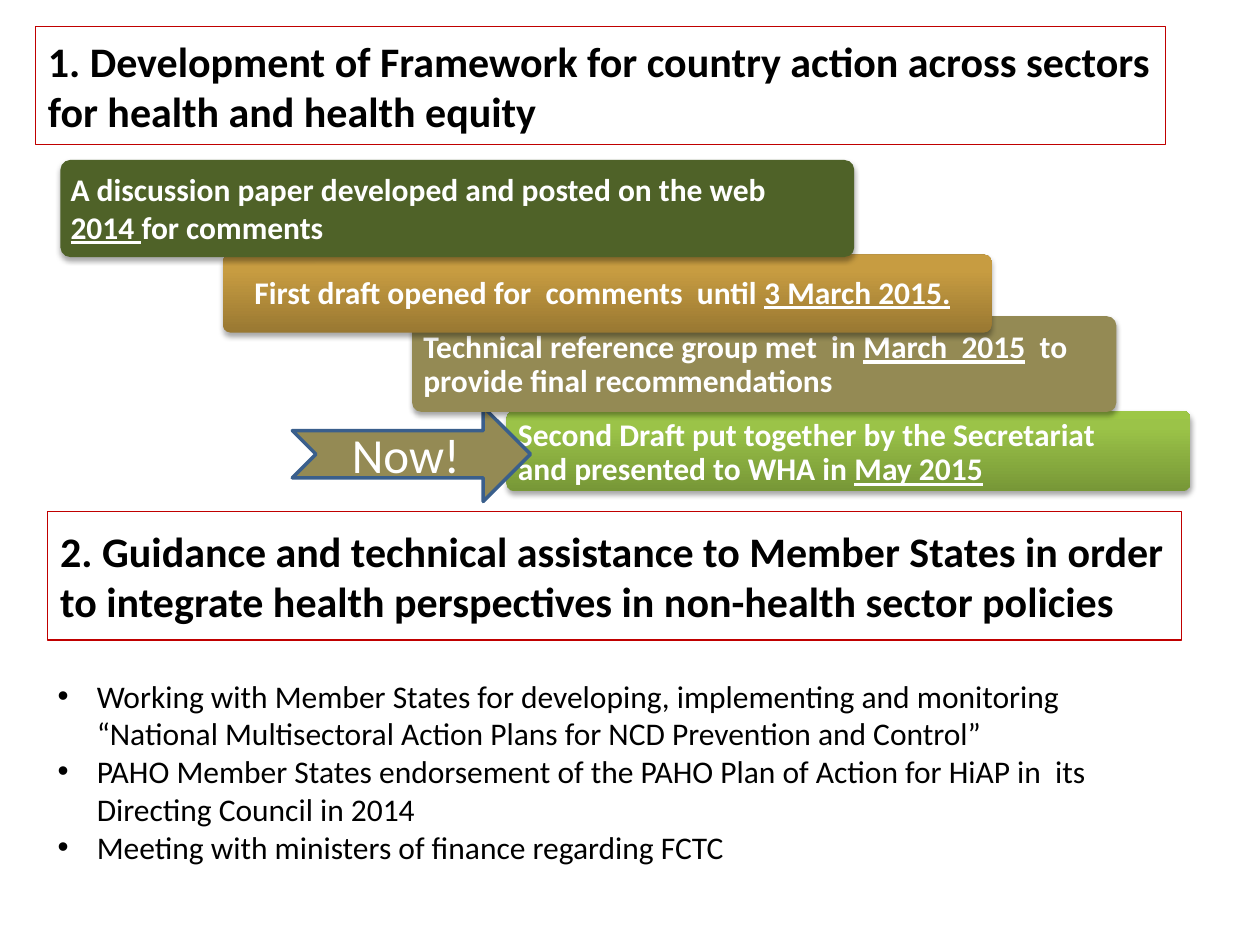
from dataclasses import dataclass
from typing import Optional

from lxml import etree
from pptx import Presentation
from pptx import util as u
from pptx.dml.color import RGBColor
from pptx.enum import shapes, text
from pptx.oxml import parse_xml
from pptx.oxml.ns import nsdecls, qn

FONT = "Calibri"
BLACK = RGBColor(0, 0, 0)
WHITE = RGBColor(255, 255, 255)
RED = RGBColor(0xC0, 0, 0)
BLUE = RGBColor(0x3A, 0x5F, 0x8C)
TAN = RGBColor(0x94, 0x8A, 0x54)
OLIVE = RGBColor(0x4F, 0x62, 0x28)
GOLDS = (RGBColor(0x99, 0x78, 0x32), RGBColor(0xC7, 0x9C, 0x41), RGBColor(0xCA, 0x9D, 0x3F))
GREENS = (RGBColor(0x77, 0x97, 0x37), RGBColor(0x9B, 0xC3, 0x48), RGBColor(0x9D, 0xC7, 0x46))
STOPS = (0, 80, 100)

prs = Presentation()
prs.slide_width, prs.slide_height = u.Inches(10), u.Inches(7.5)
COL, ROW = prs.slide_width / 100, prs.slide_height / 75


@dataclass(frozen=True)
class Box:
    col: float
    row: float
    cols: float
    rows: float

    def emu(self) -> tuple:
        return (round(self.col * COL), round(self.row * ROW),
                round(self.cols * COL), round(self.rows * ROW))


@dataclass(frozen=True)
class Step:
    box: Box
    label_box: Box
    label: str
    colors: tuple
    inset: float
    spacing: Optional[float] = None


def write(tf, content: str, *, size: int, color=BLACK, bold=False, align=None,
          anchor=text.MSO_ANCHOR.MIDDLE, inset=None, spacing=None, after=None,
          before=None, bullet=False) -> None:
    tf.word_wrap = True
    tf.auto_size = text.MSO_AUTO_SIZE.NONE
    tf.vertical_anchor = anchor
    if inset is not None:
        tf.margin_left = tf.margin_right = tf.margin_top = tf.margin_bottom = u.Inches(inset)
    for i, line in enumerate(content.split("\n")):
        p = tf.add_paragraph() if i else tf.paragraphs[0]
        p.alignment = align or text.PP_ALIGN.LEFT
        p.line_spacing, p.space_after, p.space_before = spacing, after, before
        if bullet:
            pPr = p._p.get_or_add_pPr()
            pPr.set("marL", str(u.Inches(0.31)))
            pPr.set("indent", str(-u.Inches(0.31)))
            etree.SubElement(pPr, qn("a:buFont")).set("typeface", "Arial")
            etree.SubElement(pPr, qn("a:buChar")).set("char", "•")
        for n, part in enumerate(line.split("_")):
            if part:
                r = p.add_run()
                r.text = part
                f = r.font
                f.name, f.size, f.bold, f.color.rgb = FONT, u.Pt(size), bold, color
                if n % 2:
                    f.underline = True


def outline(sp, color: RGBColor, width: float) -> None:
    sp.line.color.rgb = color
    sp.line.width = u.Pt(width)


def paint(sp, colors: tuple) -> None:
    if len(colors) == 1:
        sp.fill.solid()
        sp.fill.fore_color.rgb = colors[0]
        return
    stops = "".join(f'<a:gs pos="{pos * 1000}"><a:srgbClr val="{c}"/></a:gs>'
                    for pos, c in zip(STOPS, colors))
    sp._element.spPr.find(qn("a:prstGeom")).addnext(parse_xml(
        f'<a:gradFill {nsdecls("a")} rotWithShape="1"><a:gsLst>{stops}</a:gsLst>'
        '<a:lin ang="16200000" scaled="0"/></a:gradFill>'))


def cast_shadow(sp) -> None:
    sp.shadow.inherit = False
    sp._element.spPr.find(qn("a:effectLst")).append(parse_xml(
        f'<a:outerShdw {nsdecls("a")} blurRad="{u.Pt(3.1)}" dist="{u.Pt(1.8)}" '
        'dir="5400000" rotWithShape="0"><a:srgbClr val="000000">'
        '<a:alpha val="35000"/></a:srgbClr></a:outerShdw>'))


def draw_step(s, step: Step) -> None:
    group = s.shapes.add_group_shape()
    sp = group.shapes.add_shape(shapes.MSO_SHAPE.ROUNDED_RECTANGLE, *step.box.emu())
    sp.adjustments[0] = 0.1
    paint(sp, step.colors)
    sp.line.fill.background()
    cast_shadow(sp)
    label = group.shapes.add_textbox(*step.label_box.emu())
    write(label.text_frame, step.label, size=18, color=WHITE, bold=True, inset=step.inset,
          spacing=step.spacing, after=u.Pt(6.3) if step.spacing else None)


def draw_title(s) -> None:
    sp = s.shapes.title
    sp.left, sp.top, sp.width, sp.height = Box(2.8, 2.1, 89.7, 9.4).emu()
    outline(sp, RED, 0.75)
    write(sp.text_frame, "1. Development of Framework for country action across sectors "
          "for health and health equity", size=24, bold=True, before=u.Pt(4.8))


def draw_arrow(s) -> None:
    sp = s.shapes.add_shape(shapes.MSO_SHAPE.NOTCHED_RIGHT_ARROW, *Box(23.2, 32.3, 18.9, 7.5).emu())
    sp.shadow.inherit = False
    paint(sp, (TAN,))
    outline(sp, BLUE, 2)
    write(sp.text_frame, "Now! ", size=28, color=WHITE, align=text.PP_ALIGN.CENTER)


def draw_guidance(s) -> None:
    sp = s.shapes.add_shape(shapes.MSO_SHAPE.RECTANGLE, *Box(3.8, 40.6, 90, 10.2).emu())
    sp.shadow.inherit = False
    sp.fill.background()
    outline(sp, RED, 0.75)
    write(sp.text_frame, "2. Guidance and technical assistance to Member States in order "
          "to integrate health perspectives in non-health sector policies", size=24, bold=True)
    body = s.shapes.add_textbox(*Box(3.6, 53.2, 89.8, 16.2).emu())
    write(body.text_frame,
          "Working with Member States for developing, implementing and monitoring  "
          "“National Multisectoral Action Plans for NCD Prevention and Control”\n"
          "PAHO Member States endorsement of the PAHO Plan of Action for HiAP in  its "
          "Directing Council in 2014\n"
          "Meeting with ministers of finance regarding FCTC",
          size=18, anchor=text.MSO_ANCHOR.TOP, bullet=True)


LAST_STEP = Step(Box(40.2, 32.6, 54.3, 6.4), Box(40.4, 31.8, 50.1, 8.4),
                 "Second Draft put together by the Secretariat and presented to WHA in _May 2015_",
                 GREENS, 0.07, 0.9)
EARLIER_STEPS = (
    Step(Box(32.7, 25.1, 55.9, 7.6), Box(32.9, 25.4, 55.7, 7.2),
         "Technical reference group met  in _March  2015_  to provide final recommendations",
         (TAN,), 0.07, 0.9),
    Step(Box(17.7, 20.2, 61, 6.2), Box(19.4, 20.2, 59.3, 5.9),
         "First draft opened for  comments  until _3 March 2015._", GOLDS, 0.08),
    Step(Box(4.8, 12.7, 63, 7.7), Box(5, 12.9, 59.2, 7.2),
         "A discussion paper developed and posted on the web _2014 _for comments",
         (OLIVE,), 0.06),
)


def main() -> None:
    s = prs.slides.add_slide(prs.slide_layouts[5])
    draw_title(s)
    draw_step(s, LAST_STEP)
    draw_arrow(s)
    draw_guidance(s)
    for step in EARLIER_STEPS:
        draw_step(s, step)
    prs.save("out.pptx")


if __name__ == "__main__":
    main()
